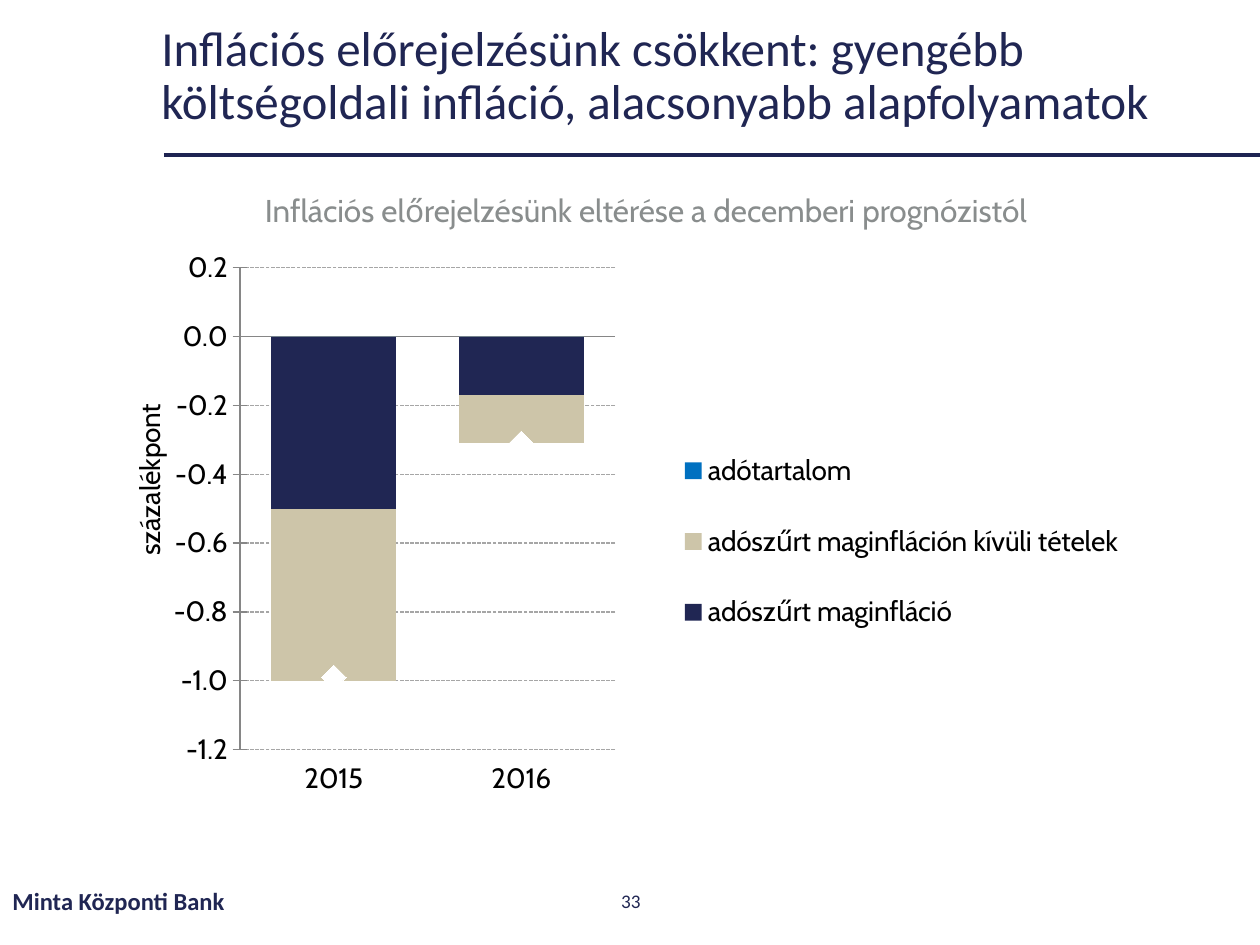
import copy

import pptx
import pptx.chart.data
import pptx.dml.color
import pptx.enum.chart
import pptx.enum.dml
import pptx.enum.shapes
import pptx.enum.text
import pptx.oxml.ns
import pptx.util
from lxml import etree

PX = 914400 / 126
NAVY = "202653"
RULE = "1E2452"
GREY = "898D8D"
AXIS = "868686"
GRID = "A6A6A6"
WHITE = "FFFFFF"
BLACK = "000000"
COMPONENTS = [
    ("adószűrt maginfláció", (-0.5, -0.17), NAVY),
    ("adószűrt maginfláción kívüli tételek", (-0.5, -0.14), "CDC5A9"),
    ("adótartalom", (0, 0), "0070C0"),
]
TOTAL = ("Series 4", (-0.99, -0.31))
qn = pptx.oxml.ns.qn


def px(length):
    return pptx.util.Emu(round(length * PX))


def box(*lengths):
    return [px(length) for length in lengths]


def color(value):
    return pptx.dml.color.RGBColor.from_string(value)


def style_font(font, size, name, tint, bold=False):
    font.size = pptx.util.Pt(size)
    font.name = name
    font.color.rgb = color(tint)
    font.bold = bold


def add_text(slide, text, at, size, font="Calibri", tint=NAVY, bold=False,
             align="LEFT", spacing=None):
    frame = slide.shapes.add_textbox(*box(*at)).text_frame
    frame.word_wrap = True
    frame.vertical_anchor = pptx.enum.text.MSO_ANCHOR.MIDDLE
    paragraph = frame.paragraphs[0]
    paragraph.alignment = getattr(pptx.enum.text.PP_ALIGN, align)
    paragraph.line_spacing = spacing
    run = paragraph.add_run()
    run.text = text
    style_font(run.font, size, font, tint, bold)


def add_rule(slide, start, end):
    rule = slide.shapes.add_connector(
        pptx.enum.shapes.MSO_CONNECTOR.STRAIGHT, *box(*start, *end))
    rule.line.color.rgb = color(RULE)
    rule.line.width = pptx.util.Pt(2.25)
    etree.SubElement(rule.element.spPr, qn("a:effectLst"))


def add_child(parent, tag, value):
    child = etree.SubElement(parent, qn(tag))
    child.set("val", str(value))
    return child


def set_layout(parent, inner=False, **fractions):
    old = parent.find(qn("c:layout"))
    if old is not None:
        parent.remove(old)
    layout = etree.Element(qn("c:layout"))
    manual = etree.SubElement(layout, qn("c:manualLayout"))
    if inner:
        add_child(manual, "c:layoutTarget", "inner")
    for side in ("x", "y"):
        add_child(manual, f"c:{side}Mode", "edge")
    for side, fraction in fractions.items():
        add_child(manual, f"c:{side}", fraction)
    overlay = parent.find(qn("c:overlay"))
    parent.insert(0 if overlay is None else parent.index(overlay), layout)


def move_total_to_line(plot_area):
    bars = plot_area.find(qn("c:barChart"))
    total = bars.findall(qn("c:ser"))[-1]
    bars.remove(total)
    invert = total.find(qn("c:invertIfNegative"))
    if invert is not None:
        total.remove(invert)
    lines = etree.Element(qn("c:lineChart"))
    add_child(lines, "c:grouping", "standard")
    add_child(lines, "c:varyColors", 0)
    lines.append(total)
    add_child(lines, "c:marker", 1)
    for axis_id in bars.findall(qn("c:axId")):
        lines.append(copy.deepcopy(axis_id))
    bars.addnext(lines)


def style_axes(chart):
    years, points = chart.category_axis, chart.value_axis
    ticks = pptx.enum.chart.XL_TICK_MARK
    for axis in (years, points):
        axis.format.line.color.rgb = color(AXIS)
        axis.format.line.width = pptx.util.Pt(0.75)
        axis.minor_tick_mark = ticks.NONE
    years.major_tick_mark = ticks.NONE
    years.tick_label_position = pptx.enum.chart.XL_TICK_LABEL_POSITION.LOW
    years.has_major_gridlines = False
    points.major_tick_mark = ticks.CROSS
    points.minimum_scale, points.maximum_scale = -1.2, 0.2
    points.major_unit = 0.2
    points.tick_labels.number_format = "0.0"
    points.tick_labels.number_format_is_linked = False
    points.has_major_gridlines = True
    grid = points.major_gridlines.format.line
    grid.color.rgb = color(GRID)
    grid.width = pptx.util.Pt(0.75)
    grid.dash_style = pptx.enum.dml.MSO_LINE.SQUARE_DOT
    unit = points.axis_title.text_frame.paragraphs[0].add_run()
    unit.text = "százalékpont"
    style_font(unit.font, 16, "Cabin", BLACK)


def style_series(chart):
    bars, line = chart.plots
    bars.gap_width, bars.overlap = 50, 100
    bars.vary_by_categories = False
    for series, (_, _, tint) in zip(bars.series, COMPONENTS):
        series.invert_if_negative = False
        series.format.fill.solid()
        series.format.fill.fore_color.rgb = color(tint)
    total = line.series[0]
    total.smooth = False
    total.format.line.fill.background()
    total.marker.style = pptx.enum.chart.XL_MARKER_STYLE.DIAMOND
    total.marker.size = 14
    total.marker.format.fill.solid()
    total.marker.format.fill.fore_color.rgb = color(WHITE)
    total.marker.format.line.fill.background()


def add_legend(chart):
    chart.has_legend = True
    chart.legend.position = pptx.enum.chart.XL_LEGEND_POSITION.RIGHT
    chart.legend.include_in_layout = False
    legend = chart.element.find(".//" + qn("c:legend"))
    hidden = etree.Element(qn("c:legendEntry"))
    add_child(hidden, "c:idx", len(COMPONENTS))
    add_child(hidden, "c:delete", 1)
    legend.find(qn("c:legendPos")).addnext(hidden)
    set_layout(legend, x=0.52, y=0.29, w=0.47, h=0.42)


def add_forecast_chart(slide, at):
    data = pptx.chart.data.CategoryChartData(number_format="0.00")
    data.categories = ["2015", "2016"]
    for name, values, *_ in [*COMPONENTS, TOTAL]:
        data.add_series(name, values)
    chart = slide.shapes.add_chart(
        pptx.enum.chart.XL_CHART_TYPE.COLUMN_STACKED, *box(*at), data).chart
    chart.has_title = False
    style_font(chart.font, 16, "Cabin", BLACK)
    plot_area = chart.element.find(".//" + qn("c:plotArea"))
    move_total_to_line(plot_area)
    style_series(chart)
    style_axes(chart)
    add_legend(chart)
    set_layout(plot_area, inner=True, x=0.12, y=0.04, w=0.36, h=0.81)
    unit_title = chart.value_axis.axis_title.element
    set_layout(unit_title, x=0.01, y=0.26)
    body = unit_title.find(".//" + qn("a:bodyPr"))
    body.set("rot", "-5400000")
    body.set("vert", "horz")


def main():
    deck = pptx.Presentation()
    deck.slide_width, deck.slide_height = box(1260, 945)
    slide = deck.slides.add_slide(deck.slide_layouts[6])
    add_rule(slide, (164, 155), (1260, 155))
    add_text(slide, "Inflációs előrejelzésünk csökkent: gyengébb "
             "költségoldali infláció, alacsonyabb alapfolyamatok",
             (149, 25, 1032, 105), 28, spacing=0.9)
    add_text(slide, "Minta Központi Bank", (0, 876, 426, 50), 14, bold=True)
    add_text(slide, "33", (489, 876, 284, 50), 11, align="CENTER")
    add_forecast_chart(slide, (115, 244, 1042, 595))
    add_text(slide, "Inflációs előrejelzésünk eltérése a decemberi prognózistól",
             (115, 185, 1062, 50), 18, font="Cabin", tint=GREY, align="CENTER")
    deck.save("out.pptx")


if __name__ == "__main__":
    main()
